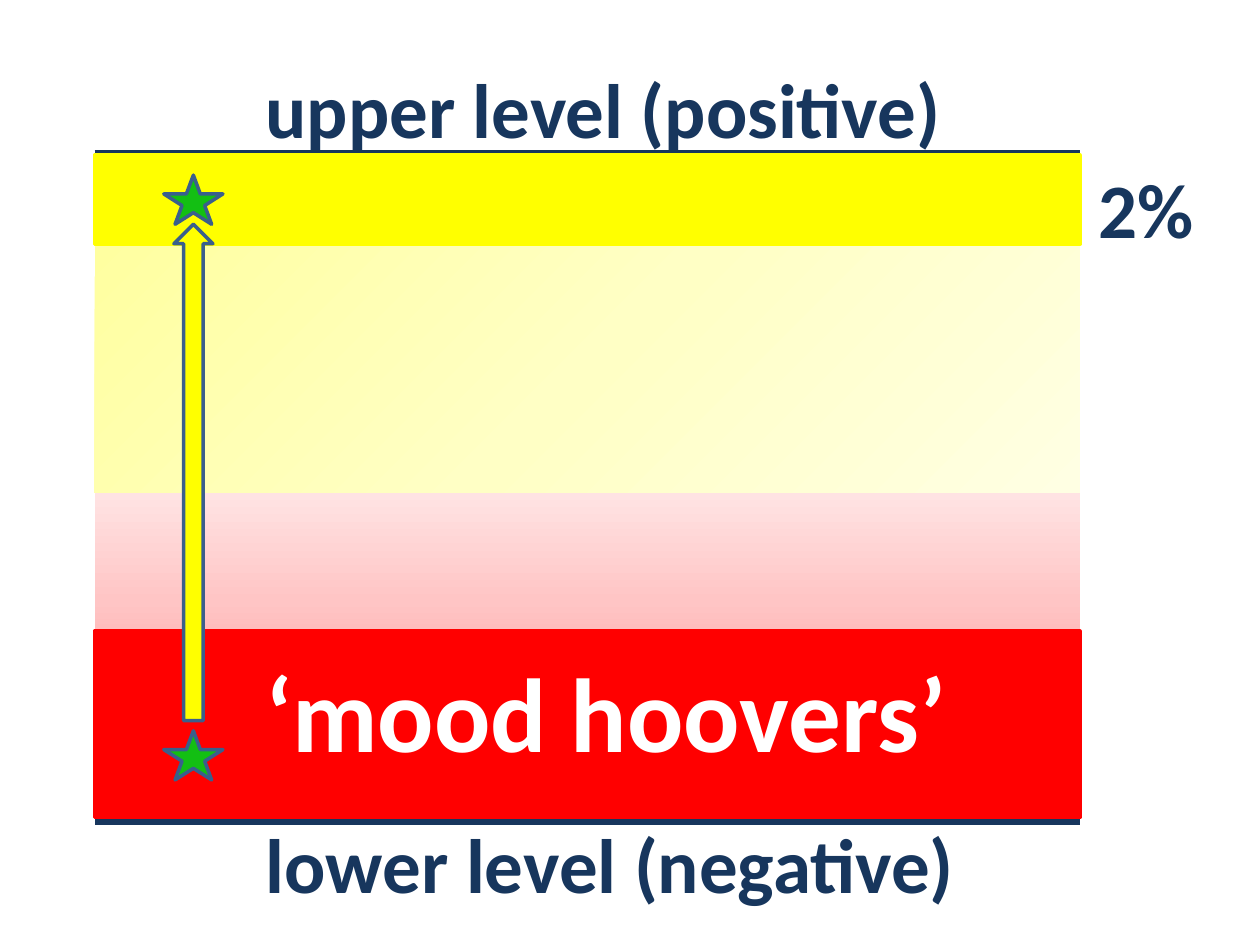
"""Build the mood levels slide, from upper (positive) to lower (negative)."""
from copy import deepcopy

from pptx import Presentation, util as u
from pptx.dml.color import RGBColor
from pptx.enum import shapes, text
from pptx.oxml import ns, parse_xml

NAVY, STEEL, YELLOW, RED, GREEN = "17365D", "3A5F8C", "FFFF00", "FF0000", "13BF13"
LEFT, WIDTH = 0.75, 7.82
TOP, BOTTOM = 1.23, 6.51
TEXT_LEFT = 2.01
SHAPE = shapes.MSO_SHAPE


def rgb(value):
    return RGBColor.from_string(value)


def add_shape(kind, left, top, width, height, fill=None, line=None):
    sp = s.shapes.add_shape(kind, *map(u.Inches, (left, top, width, height)))
    sp.shadow.inherit = False
    if fill:
        sp.fill.solid()
        sp.fill.fore_color.rgb = rgb(fill)
    if line:
        sp.line.color.rgb = rgb(line)
        sp.line.width = u.Pt(2)
    else:
        sp.line.fill.background()
    return sp


prs = Presentation()
prs.slide_width, prs.slide_height = u.Inches(10), u.Inches(7.5)
s = prs.slides.add_slide(prs.slide_layouts[6])

for top, height, angle, colors in (
    (1.94, 1.97, 315, ("FFFFA0", "FFFFC5", "FFFFE3")),
    (3.91, 1.73, 90, ("FFA0A0", "FFC5C5", "FFE3E3")),
):
    sp = add_shape(SHAPE.RECTANGLE, LEFT, top, WIDTH, height)
    sp.fill.gradient()
    sp.fill.gradient_angle = angle
    first = sp._element.spPr.find(".//" + ns.qn("a:gs"))
    first.addnext(deepcopy(first))
    for i, (stop, color) in enumerate(zip(sp.fill.gradient_stops, colors)):
        stop.position = i / 2
        stop.color.rgb = rgb(color)

for y in (BOTTOM, TOP):
    ends = map(u.Inches, (LEFT, y, LEFT + WIDTH, y))
    line = s.shapes.add_connector(shapes.MSO_CONNECTOR.STRAIGHT, *ends)
    line.line.color.rgb = rgb(NAVY)
    line.line.width = u.Pt(6)
    line._element.spPr.append(parse_xml(f"<a:effectLst {ns.nsdecls('a')}/>"))

add_shape(SHAPE.RECTANGLE, LEFT, 5.01, WIDTH, 1.48, RED, RED)
add_shape(SHAPE.RECTANGLE, LEFT, TOP, WIDTH, 0.71, YELLOW, YELLOW)
add_shape(SHAPE.UP_ARROW, 1.38, 1.78, 0.31, 3.94, YELLOW, STEEL)
for top in (5.8, 1.39):
    add_shape(SHAPE.STAR_5_POINT, 1.3, top, 0.47, 0.39, GREEN, STEEL)

for label, left, top, width, height, size, color in (
    ("lower level (negative)", TEXT_LEFT, 6.43, 5.72, 0.84, 44, NAVY),
    ("upper level (positive)", TEXT_LEFT, 0.44, 5.62, 0.84, 44, NAVY),
    ("2%", 8.62, TOP, 0.96, 0.84, 44, NAVY),
    ("‘mood hoovers’", TEXT_LEFT, 5.09, 5.66, 1.11, 60, "FFFFFF"),
):
    tf = s.shapes.add_textbox(*map(u.Inches, (left, top, width, height))).text_frame
    tf.word_wrap = False
    tf.auto_size = text.MSO_AUTO_SIZE.SHAPE_TO_FIT_TEXT
    p = tf.paragraphs[0]
    p.text = label
    p.font.name, p.font.size, p.font.bold = "Calibri", u.Pt(size), True
    p.font.color.rgb = rgb(color)

prs.save("out.pptx")
